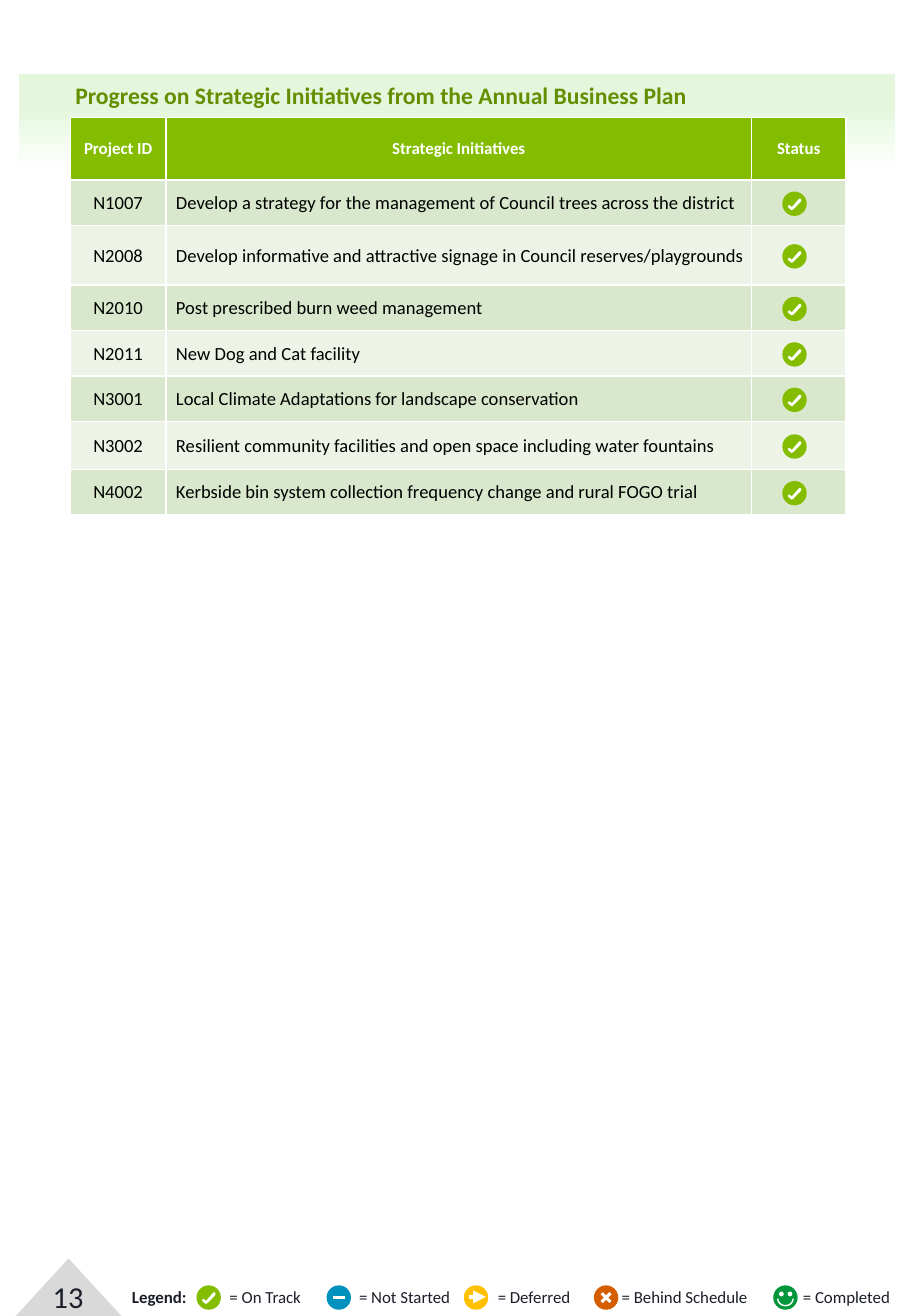
from dataclasses import dataclass
from math import cos, pi, sin

from lxml.etree import SubElement
from pptx import Presentation
from pptx.dml.color import RGBColor
from pptx.enum.shapes import MSO_CONNECTOR, MSO_SHAPE
from pptx.enum.text import MSO_ANCHOR, MSO_AUTO_SIZE, PP_ALIGN
from pptx.oxml.ns import qn
from pptx.util import Cm, Pt


@dataclass(frozen=True)
class Theme:
    font: str = "Calibri"
    title_size: int = 14
    number_size: int = 18
    small_size: int = 10
    body_size: int = 11
    white: RGBColor = RGBColor.from_string("FFFFFF")
    black: RGBColor = RGBColor.from_string("000000")
    ink: RGBColor = RGBColor.from_string("1C1F2A")
    title: RGBColor = RGBColor.from_string("638E00")
    banner: RGBColor = RGBColor.from_string("E4F7DD")
    corner: RGBColor = RGBColor.from_string("D9D9D9")
    odd_row: RGBColor = RGBColor.from_string("D9E8CC")
    even_row: RGBColor = RGBColor.from_string("EDF4E7")
    green: RGBColor = RGBColor.from_string("84BD00")
    blue: RGBColor = RGBColor.from_string("0092BC")
    yellow: RGBColor = RGBColor.from_string("FFC000")
    orange: RGBColor = RGBColor.from_string("D45D00")
    emerald: RGBColor = RGBColor.from_string("009639")


theme = Theme()


def write(frame, text, size, color, bold=False, align=PP_ALIGN.LEFT):
    frame.text = text
    paragraph = frame.paragraphs[0]
    paragraph.alignment = align
    paragraph.font.name = theme.font
    paragraph.font.size = Pt(size)
    paragraph.font.bold = bold
    paragraph.font.color.rgb = color


def paint(shape, color):
    shape.shadow.inherit = False
    shape.fill.solid()
    shape.fill.fore_color.rgb = color
    shape.line.fill.background()


deck = Presentation()
deck.slide_width = Cm(19.05)
deck.slide_height = Cm(27.51)
slide = deck.slides.add_slide(deck.slide_layouts[5])

corner = slide.shapes.add_shape(
    MSO_SHAPE.ISOSCELES_TRIANGLE, Cm(0.33), Cm(26.31), Cm(2.21), Cm(1.2))
paint(corner, theme.corner)

page_number = slide.shapes.add_textbox(Cm(0.79), Cm(26.59), Cm(1.27), Cm(0.92))
write(page_number.text_frame, "13", theme.number_size, theme.ink, align=PP_ALIGN.CENTER)

banner = slide.shapes.add_shape(MSO_SHAPE.RECTANGLE, Cm(0.4), Cm(1.55), Cm(18.31), Cm(2.03))
paint(banner, theme.banner)
banner.fill.gradient()
banner.fill.gradient_angle = 90
for stop, (position, color) in zip(
        banner.fill.gradient_stops, [(0, theme.white), (0.67, theme.banner)]):
    stop.position = position
    stop.color.rgb = color

initiatives = [
    ("N1007", "Develop a strategy for the management of Council trees across the district"),
    ("N2008", "Develop informative and attractive signage in Council reserves/playgrounds"),
    ("N2010", "Post prescribed burn weed management"),
    ("N2011", "New Dog and Cat facility"),
    ("N3001", "Local Climate Adaptations for landscape conservation"),
    ("N3002", "Resilient community facilities and open space including water fountains"),
    ("N4002", "Kerbside bin system collection frequency change and rural FOGO trial"),
]
column_widths = [2, 12.24, 1.98]
row_heights = [1.3, 0.95, 1.25, 0.95, 0.95, 0.95, 1, 0.95]
table_top = 2.46
progress = slide.shapes.add_table(
    len(row_heights), len(column_widths), Cm(1.47), Cm(table_top),
    Cm(sum(column_widths)), Cm(sum(row_heights))).table
for column, width in zip(progress.columns, column_widths):
    column.width = Cm(width)
for row, height in zip(progress.rows, row_heights):
    row.height = Cm(height)

for cell, heading in zip(progress.rows[0].cells, ["Project ID", "Strategic Initiatives", "Status"]):
    cell.fill.solid()
    cell.fill.fore_color.rgb = theme.green
    cell.vertical_anchor = MSO_ANCHOR.MIDDLE
    write(cell.text_frame, heading, theme.small_size, theme.white, True, PP_ALIGN.CENTER)

for number, (project, initiative) in enumerate(initiatives, 1):
    project_cell, initiative_cell, status_cell = progress.rows[number].cells
    for cell in (project_cell, initiative_cell, status_cell):
        cell.fill.solid()
        cell.fill.fore_color.rgb = theme.odd_row if number % 2 else theme.even_row
        cell.vertical_anchor = MSO_ANCHOR.MIDDLE
        cell.margin_left = cell.margin_right = cell.margin_top = Cm(0.02)
        cell.margin_bottom = 0
    initiative_cell.margin_left = Cm(0.21)
    write(project_cell.text_frame, project, theme.body_size, theme.black, align=PP_ALIGN.CENTER)
    write(initiative_cell.text_frame, initiative, theme.body_size, theme.black)

title = slide.shapes.title
title.left, title.top, title.width, title.height = Cm(1.32), Cm(1.57), Cm(13.41), Cm(0.86)
slide.shapes.element.append(title.element)
write(title.text_frame, "Progress on Strategic Initiatives from the Annual Business Plan",
      theme.title_size, theme.title, True)
title.text_frame.word_wrap = False
title.text_frame.auto_size = MSO_AUTO_SIZE.NONE
title.text_frame.vertical_anchor = MSO_ANCHOR.TOP

tick = [(345, 155), (370, 142), (398, 168), (392, 205), (222, 378),
        (187, 385), (122, 330), (118, 298), (148, 283), (200, 322)]
bar = [(130, 230), (380, 230), (380, 280), (130, 280)]
half_turn = [(cos(step * pi / 10), sin(step * pi / 10)) for step in range(11)]
smile = ([(255 + 175 * x, 280 + 160 * y) for x, y in half_turn]
         + [(255 + 145 * x, 280 + 130 * y) for x, y in reversed(half_turn)])
cross = []
arm = [(0, -45), (70, -115), (115, -70)]
for quarter in range(4):
    cross += [(255 + x, 255 + y) for x, y in arm]
    arm = [(-y, x) for x, y in arm]

icons = {
    "On Track": (theme.green, tick),
    "Not Started": (theme.blue, bar),
    "Deferred": (theme.yellow, None),
    "Behind Schedule": (theme.orange, cross),
    "Completed": (theme.emerald, smile),
}
legend = slide.shapes.add_group_shape().shapes
legend_top = 26.87
legend_entries = [
    ("On Track", 4.11, 4.55, 2.06), ("Not Started", 6.83, 7.26, 2.46),
    ("Deferred", 9.7, 10.16, 2.06), ("Behind Schedule", 12.42, 12.75, 3.18),
    ("Completed", 16.17, 16.54, 2.36),
]
legend_labels = [("Legend:", 2.51, 1.65, True)]
marks = []
for status, icon_left, label_left, label_width in legend_entries:
    marks.append((legend, status, icon_left, legend_top))
    legend_labels.append((f"= {status}", label_left, label_width, False))
for number in range(1, len(row_heights)):
    middle = table_top + sum(row_heights[:number]) + row_heights[number] / 2
    marks.append((slide.shapes.add_group_shape().shapes, "On Track", 16.36, middle - 0.23))

for shapes, status, left, top in marks:
    color, symbol = icons[status]
    disc = shapes.add_shape(MSO_SHAPE.OVAL, Cm(left), Cm(top), Cm(0.51), Cm(0.51))
    paint(disc, color)
    if symbol:
        outline = shapes.build_freeform(*symbol[0], scale=Cm(1) / 1000)
        outline.add_line_segments(symbol[1:], close=True)
        paint(outline.convert_to_shape(Cm(left), Cm(top)), theme.white)

for eye_left in (16.29, 16.47):
    eye = legend.add_shape(
        MSO_SHAPE.OVAL, Cm(eye_left), Cm(legend_top + 0.13), Cm(0.1), Cm(0.1))
    paint(eye, theme.white)

for text, left, width, bold in legend_labels:
    label = legend.add_textbox(Cm(left), Cm(26.77), Cm(width), Cm(0.69))
    label.text_frame.word_wrap = False
    write(label.text_frame, text, theme.small_size, theme.ink, bold)

deferred_arrow = legend.add_connector(
    MSO_CONNECTOR.STRAIGHT, Cm(9.8), Cm(27.11), Cm(10.16), Cm(27.11))
deferred_arrow.line.color.rgb = theme.white
deferred_arrow.line.width = Pt(2.5)
arrow_properties = deferred_arrow.element.spPr
SubElement(arrow_properties.find(qn("a:ln")), qn("a:tailEnd"), type="triangle")
SubElement(arrow_properties, qn("a:effectLst"))

deck.save("out.pptx")
